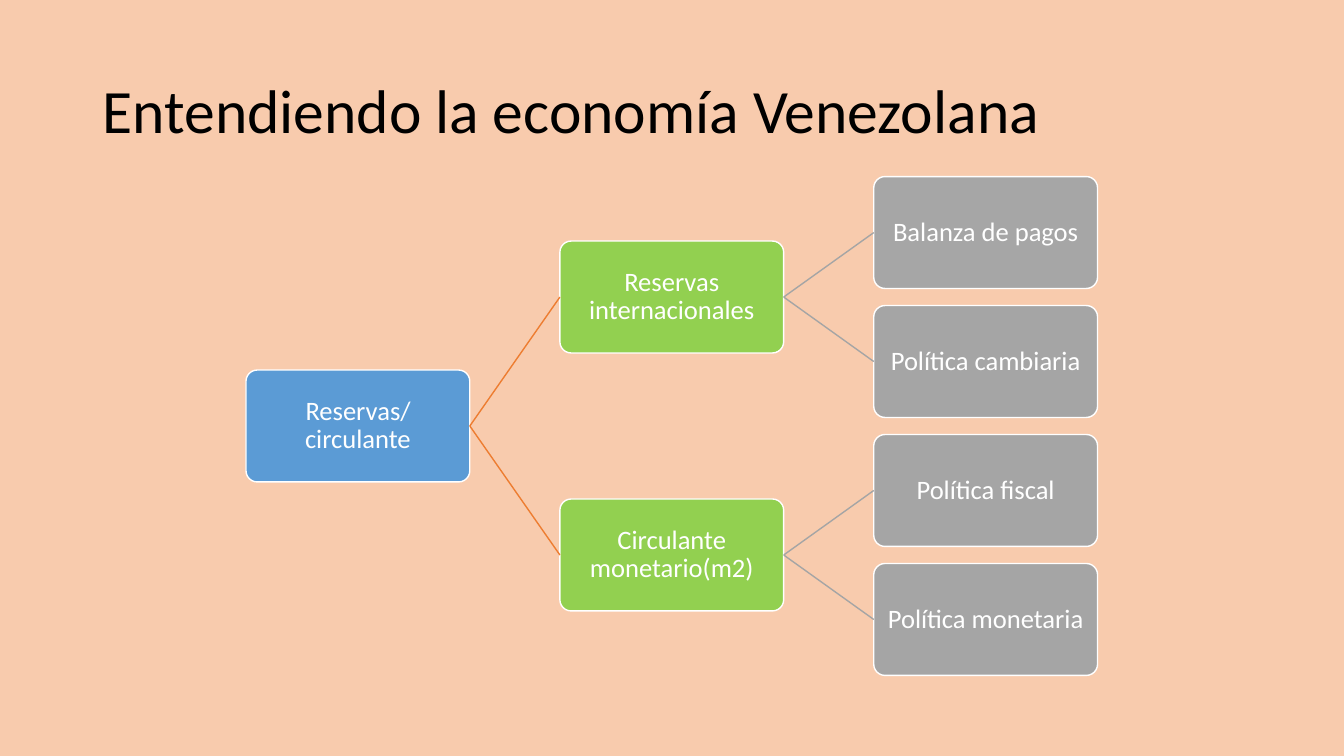
import dataclasses

import lxml.etree
import pptx
import pptx.dml.color
import pptx.enum.shapes
import pptx.enum.text
import pptx.oxml.ns
import pptx.util

Cm = pptx.util.Cm
Pt = pptx.util.Pt


def rgb(code: str) -> pptx.dml.color.RGBColor:
    return pptx.dml.color.RGBColor.from_string(code)


@dataclasses.dataclass(frozen=True)
class Theme:
    background: str = "F8CBAD"
    title: str = "000000"
    light: str = "FFFFFF"
    blue: str = "5B9BD5"
    green: str = "92D050"
    grey: str = "A5A5A5"
    soft_grey: str = "A6A6A6"
    branch_lines: tuple[str, ...] = ("ED7D31", "A5A5A5")
    font: str = "Calibri"
    title_size: float = 44
    topic_size: float = 19
    line_width: float = 1


@dataclasses.dataclass(frozen=True)
class Topic:
    text: str
    fill: str
    children: tuple["Topic", ...] = ()


THEME = Theme()

# Tree layout in centimetres
LEFT, TOP = 6.2, 4.45
COLUMN_STEP, ROW_STEP = 7.91, 3.25
BOX_WIDTH, BOX_HEIGHT = 5.64, 2.82

TREE = Topic("Reservas/circulante", THEME.blue, (
    Topic("Reservas internacionales", THEME.green, (
        Topic("Balanza de pagos", THEME.soft_grey),
        Topic("Política cambiaria", THEME.grey),
    )),
    Topic("Circulante monetario(m2)", THEME.green, (
        Topic("Política fiscal", THEME.grey),
        Topic("Política monetaria", THEME.grey),
    )),
))


def apply_format(target, values: dict) -> None:
    for name, value in values.items():
        setattr(target, name, value)


def write_text(shape, text: str, size: float, color: str, frame_format: dict, align) -> None:
    frame = shape.text_frame
    frame.text = text
    apply_format(frame, {
        "word_wrap": True,
        "auto_size": pptx.enum.text.MSO_AUTO_SIZE.NONE,
        "vertical_anchor": pptx.enum.text.MSO_ANCHOR.MIDDLE,
        **frame_format,
    })
    para = frame.paragraphs[0]
    apply_format(para, {"alignment": align, "line_spacing": 0.9})
    span = para.runs[0]
    apply_format(span.font, {"name": THEME.font, "size": Pt(size)})
    span.font.color.rgb = rgb(color)


def draw_line(line, color: str) -> None:
    line.color.rgb = rgb(color)
    line.width = Pt(THEME.line_width)


def add_box(page, topic: Topic, column: int, row: float):
    box = page.shapes.add_shape(
        pptx.enum.shapes.MSO_SHAPE.ROUNDED_RECTANGLE,
        Cm(LEFT + column * COLUMN_STEP), Cm(TOP + row * ROW_STEP),
        Cm(BOX_WIDTH), Cm(BOX_HEIGHT),
    )
    box.adjustments[0] = 0.1
    box.shadow.inherit = False
    box.fill.solid()
    box.fill.fore_color.rgb = rgb(topic.fill)
    draw_line(box.line, THEME.light)
    margins = dict.fromkeys(
        ("margin_left", "margin_right", "margin_top", "margin_bottom"), Cm(0.11))
    write_text(box, topic.text, THEME.topic_size, THEME.light, margins,
               pptx.enum.text.PP_ALIGN.CENTER)
    return box


def add_branch(page, parent, child, color: str) -> None:
    branch = page.shapes.add_connector(
        pptx.enum.shapes.MSO_CONNECTOR.STRAIGHT, 0, 0, 0, 0)
    branch.begin_connect(parent, 3)
    branch.end_connect(child, 1)
    draw_line(branch.line, color)
    lxml.etree.SubElement(branch._element.spPr, pptx.oxml.ns.qn("a:effectLst"))


def count_leaves(topic: Topic) -> int:
    return sum(map(count_leaves, topic.children)) or 1


def add_tree(page, topic: Topic, column: int = 0, first_row: int = 0):
    """Draw a topic centred on its leaves, then its children to the right."""
    box = add_box(page, topic, column, first_row + (count_leaves(topic) - 1) / 2)
    for child in topic.children:
        child_box = add_tree(page, child, column + 1, first_row)
        add_branch(page, box, child_box, THEME.branch_lines[column])
        first_row += count_leaves(child)
    return box


def main() -> None:
    # Page
    deck = pptx.Presentation()
    apply_format(deck, {"slide_width": Cm(33.87), "slide_height": Cm(19.05)})
    page = deck.slides.add_slide(deck.slide_layouts.get_by_name("Title Only"))
    page.background.fill.solid()
    page.background.fill.fore_color.rgb = rgb(THEME.background)

    # Title
    title = page.shapes.title
    apply_format(title, {"left": Cm(2.33), "top": Cm(1.01),
                         "width": Cm(29.21), "height": Cm(3.68)})
    write_text(title, "Entendiendo la economía Venezolana", THEME.title_size,
               THEME.title, {}, pptx.enum.text.PP_ALIGN.LEFT)

    # Topic tree
    add_tree(page, TREE)
    deck.save("out.pptx")


if __name__ == "__main__":
    main()
